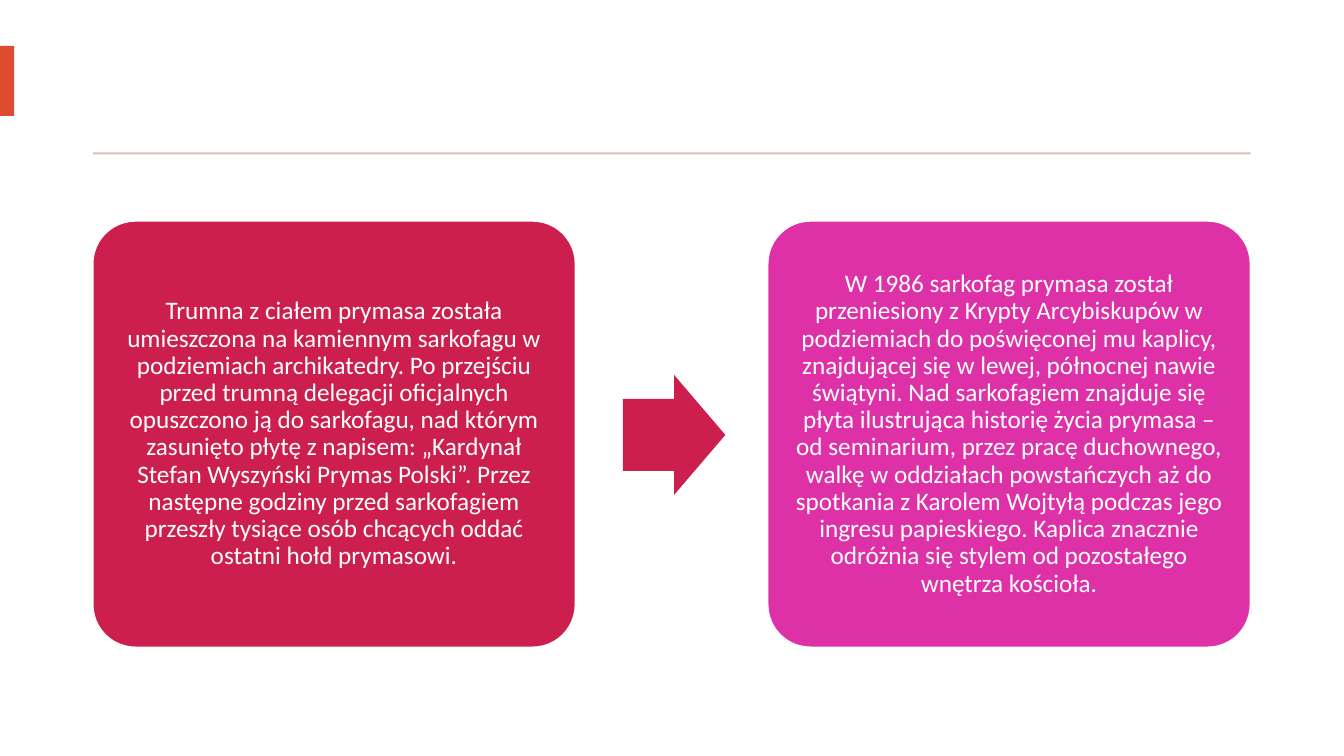
import pptx
import pptx.util
import pptx.dml.color
import pptx.enum.shapes
import pptx.enum.text

Cm = pptx.util.Cm
Pt = pptx.util.Pt
RGB = pptx.dml.color.RGBColor
KIND = pptx.enum.shapes.MSO_SHAPE

WHITE = RGB(0xFF, 0xFF, 0xFF)
ORANGE = RGB(0xDF, 0x4B, 0x31)
ROSE = RGB(0xDB, 0xC2, 0xBD)
RED = RGB(0xCD, 0x1F, 0x4D)
PINK = RGB(0xDF, 0x31, 0xA7)

LEFT = 2.34
STEP = 17.01

deck = pptx.Presentation()
deck.slide_width = Cm(33.87)
deck.slide_height = Cm(19.05)
slide = deck.slides.add_slide(deck.slide_layouts[6])


def draw(kind, x, y, w, h, color):
    shape = slide.shapes.add_shape(kind, Cm(x), Cm(y), Cm(w), Cm(h))
    shape.shadow.inherit = False
    shape.fill.solid()
    shape.fill.fore_color.rgb = color
    shape.line.fill.background()
    return shape


draw(KIND.RECTANGLE, 0, 1.16, 0.36, 1.76, ORANGE)
draw(KIND.RECTANGLE, LEFT, 3.84, 29.18, 0.05, ROSE)

arrow = draw(KIND.RIGHT_ARROW, 15.7, 9.45, 2.58, 3.02, RED)
arrow.adjustments[0] = 0.6
arrow.adjustments[1] = 0.5

cards = [
    (RED, "Trumna z ciałem prymasa została umieszczona na kamiennym sarkofagu "
          "w podziemiach archikatedry. Po przejściu przed trumną delegacji "
          "oficjalnych opuszczono ją do sarkofagu, nad którym zasunięto płytę "
          "z napisem: „Kardynał Stefan Wyszyński Prymas Polski”. Przez następne "
          "godziny przed sarkofagiem przeszły tysiące osób chcących oddać "
          "ostatni hołd prymasowi."),
    (PINK, "W 1986 sarkofag prymasa został przeniesiony z Krypty Arcybiskupów "
           "w podziemiach do poświęconej mu kaplicy, znajdującej się w lewej, "
           "północnej nawie świątyni. Nad sarkofagiem znajduje się płyta "
           "ilustrująca historię życia prymasa – od seminarium, przez pracę "
           "duchownego, walkę w oddziałach powstańczych aż do spotkania z Karolem "
           "Wojtyłą podczas jego ingresu papieskiego. Kaplica znacznie odróżnia "
           "się stylem od pozostałego wnętrza kościoła."),
]

for i, (color, text) in enumerate(cards):
    card = draw(KIND.ROUNDED_RECTANGLE, LEFT + i * STEP, 5.57, 12.16, 10.74, color)
    card.adjustments[0] = 0.1
    card.line.color.rgb = WHITE
    card.line.width = Pt(1)
    frame = card.text_frame
    frame.word_wrap = True
    frame.vertical_anchor = pptx.enum.text.MSO_ANCHOR.MIDDLE
    frame.margin_left = frame.margin_right = Cm(0.19)
    frame.margin_top = frame.margin_bottom = Cm(0.19)
    frame.text = text
    para = frame.paragraphs[0]
    para.alignment = pptx.enum.text.PP_ALIGN.CENTER
    para.line_spacing = 0.9
    font = para.runs[0].font
    font.name = "Calibri"
    font.size = Pt(18)
    font.color.rgb = WHITE

deck.save("out.pptx")
